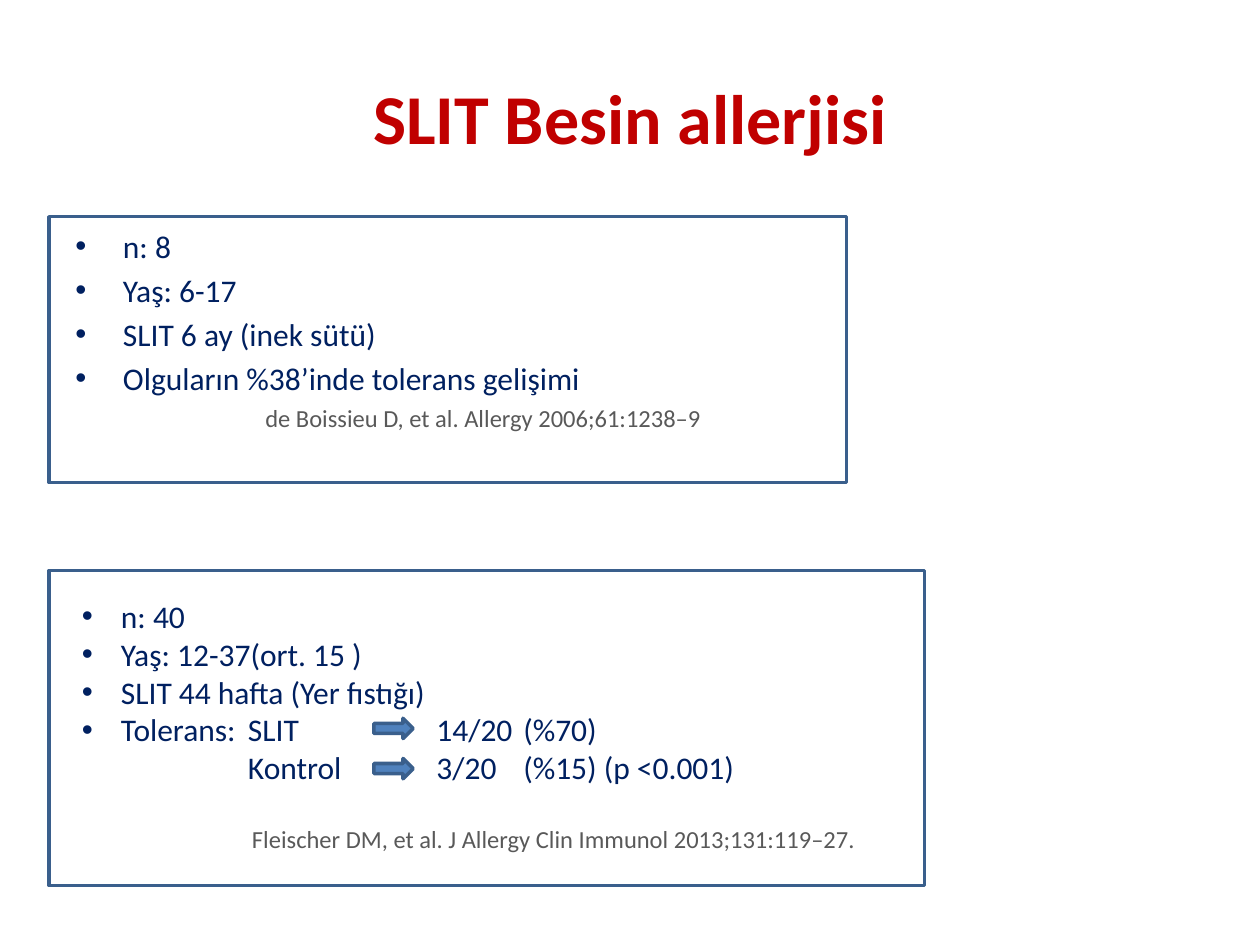
from lxml import etree
from pptx import Presentation
from pptx.dml.color import RGBColor
from pptx.enum import shapes, text
from pptx.oxml.ns import qn
from pptx.util import Cm, Pt

FONT = "Calibri"
RED, NAVY, GREY = "C00000", "002060", "595959"
BLUE, EDGE = "4F81BD", "3A5F8C"

TITLE = "SLIT Besin allerjisi"
STUDIES = [
    dict(
        frame=(0.99, 4.37, 16.08, 5.36),
        box=(1.27, 4.45, 22.86, 5.2),
        indent=0.96, gap=3.5, cite_left=3.83, cite_gap=4,
        items=["n: 8", "Yaş: 6-17", "SLIT 6 ay (inek sütü)",
               "Olguların %38’inde tolerans gelişimi"],
        cite="de Boissieu D, et al. Allergy 2006;61:1238–9",
    ),
    dict(
        frame=(0.99, 11.5, 17.65, 6.35),
        box=(1.4, 11.91, 16.86, 5.46),
        indent=0.79, gap=0, cite_left=3.43, cite_gap=22,
        items=["n: 40", "Yaş: 12-37(ort. 15 )", "SLIT 44 hafta (Yer fıstığı)",
               "Tolerans:\tSLIT\t14/20\t(%70)"
               "\v\tKontrol\t3/20\t(%15) (p <0.001)"],
        cite="Fleischer DM, et al. J Allergy Clin Immunol 2013;131:119–27.",
    ),
]
TABS = (3.35, 7.15, 8.9)
ARROWS = (14.48, 15.29)


def color(code):
    return RGBColor.from_string(code)


def style(para, size, code, bold=False):
    font = para.font
    font.name, font.size, font.bold = FONT, Pt(size), bold
    font.color.rgb = color(code)


def outline(slide, kind, place, fill=None):
    shape = slide.shapes.add_shape(kind, *map(Cm, place))
    shape.shadow.inherit = False
    if fill:
        shape.fill.solid()
        shape.fill.fore_color.rgb = color(fill)
    else:
        shape.fill.background()
    shape.line.color.rgb = color(EDGE)
    shape.line.width = Pt(2)


def layout(para, left, bullet, tabs):
    props = para._p.get_or_add_pPr()
    props.set("marL", str(Cm(left)))
    props.set("indent", str(-Cm(left) if bullet else 0))
    if bullet:
        etree.SubElement(props, qn("a:buFont"), typeface="Arial")
        etree.SubElement(props, qn("a:buChar"), char="•")
    else:
        etree.SubElement(props, qn("a:buNone"))
    if tabs:
        stops = etree.SubElement(props, qn("a:tabLst"))
        for pos in tabs:
            etree.SubElement(stops, qn("a:tab"), pos=str(Cm(pos)), algn="l")


def write(slide, study):
    frame = slide.shapes.add_textbox(*map(Cm, study["box"])).text_frame
    frame.word_wrap = True
    rows = [(line, study["indent"], True, 18, NAVY, study["gap"])
            for line in study["items"]]
    rows.append((study["cite"], study["cite_left"], False, 14, GREY,
                 study["cite_gap"]))
    for num, (line, left, bullet, size, code, space) in enumerate(rows):
        para = frame.add_paragraph() if num else frame.paragraphs[0]
        para.text = line
        para.space_before = Pt(space)
        layout(para, left, bullet, TABS if "\t" in line else ())
        style(para, size, code)


def main():
    deck = Presentation()
    deck.slide_width, deck.slide_height = Cm(25.4), Cm(19.05)
    slide = deck.slides.add_slide(deck.slide_layouts[5])

    title = slide.shapes.title
    title.left, title.top, title.width, title.height = map(
        Cm, (1.27, 0.76, 22.86, 3.18))
    title.text_frame.text = TITLE
    title.text_frame.vertical_anchor = text.MSO_ANCHOR.MIDDLE
    head = title.text_frame.paragraphs[0]
    head.alignment = text.PP_ALIGN.CENTER
    style(head, 40, RED, True)

    for study in STUDIES:
        outline(slide, shapes.MSO_SHAPE.RECTANGLE, study["frame"])
        write(slide, study)
    for top in ARROWS:
        outline(slide, shapes.MSO_SHAPE.RIGHT_ARROW, (7.54, top, 0.79, 0.41), BLUE)

    deck.save("out.pptx")


if __name__ == "__main__":
    main()
